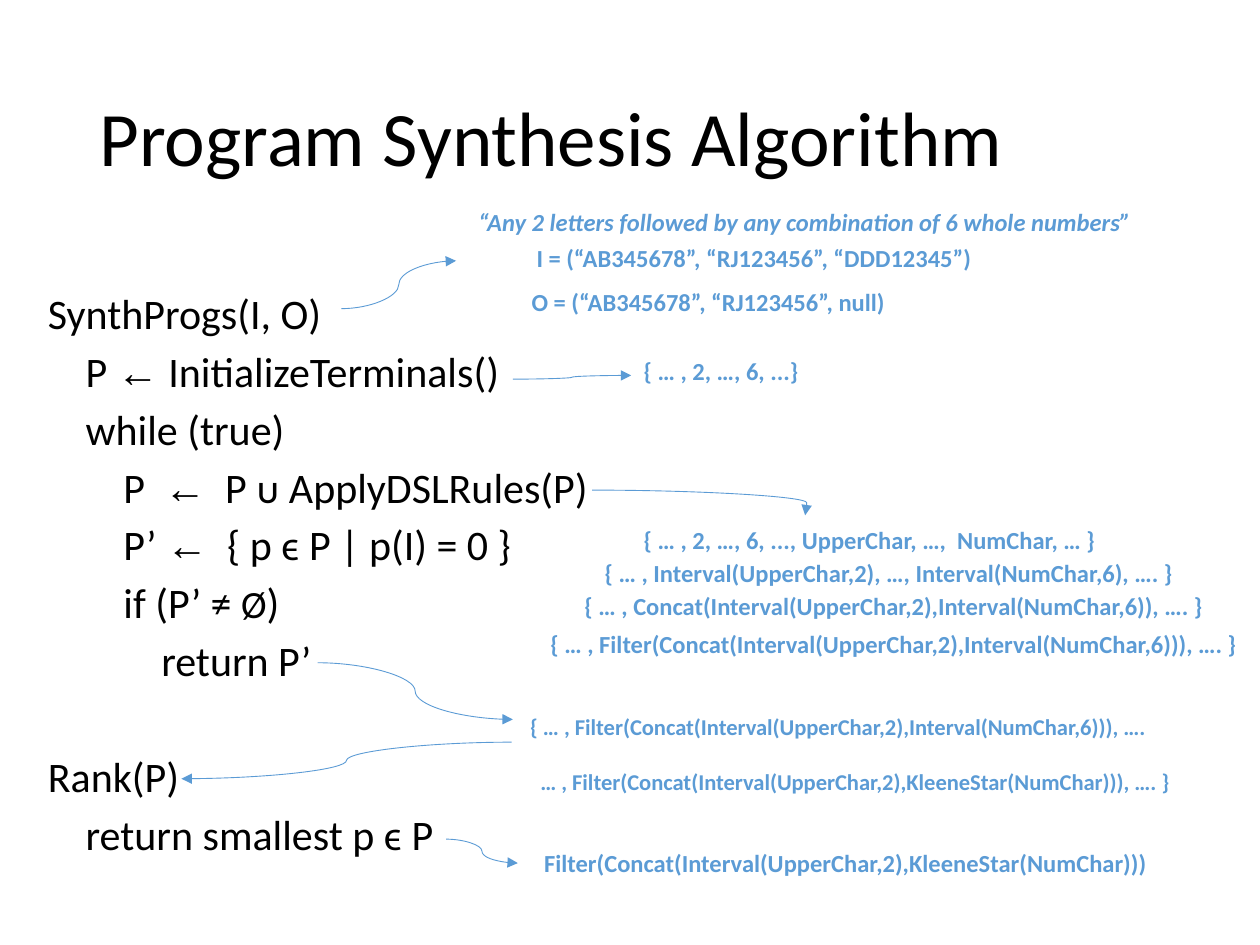
from dataclasses import dataclass

from lxml.etree import SubElement
from pptx import Presentation
from pptx.dml.color import RGBColor
from pptx.enum.shapes import MSO_CONNECTOR as Connector
from pptx.enum.text import MSO_ANCHOR as Anchor, MSO_AUTO_SIZE as AutoSize, PP_ALIGN as Align
from pptx.oxml.ns import qn
from pptx.util import Inches, Pt


@dataclass(frozen=True)
class Theme:
    font: str = "Calibri"
    arrow_font: str = "Times New Roman"
    ink: str = "000000"
    accent: str = "5B9BD5"
    title_size: float = 44
    code_size: float = 24
    symbol_size: float = 22
    note_size: float = 14
    small_size: float = 12.9
    line_width: float = 0.5


THEME = Theme()


def add_span(para, text, size=THEME.code_size, color=THEME.ink, font=THEME.font,
             bold=False, italic=False):
    span = para.add_run()
    span.text = text
    span.font.size = Pt(size)
    span.font.name = font
    span.font.bold = bold
    span.font.italic = italic
    span.font.color.rgb = RGBColor.from_string(color)


def set_indent(para, inches):
    properties = para._p.get_or_add_pPr()
    properties.set("marL", str(Inches(inches)))
    properties.set("indent", "0")
    return properties


def place(shape, left, top, width, height):
    shape.left, shape.top = Inches(left), Inches(top)
    shape.width, shape.height = Inches(width), Inches(height)


class SlideBuilder:
    def __init__(self, deck, theme):
        self.theme = theme
        self.slide = deck.slides.add_slide(deck.slide_layouts[1])

    def title(self, text, *bounds):
        shape = self.slide.shapes.title
        place(shape, *bounds)
        frame = shape.text_frame
        frame.auto_size = AutoSize.NONE
        frame.vertical_anchor = Anchor.MIDDLE
        para = frame.paragraphs[0]
        para.alignment = Align.LEFT
        para.line_spacing = 0.9
        add_span(para, text, size=self.theme.title_size)

    def code(self, lines, *bounds):
        """Each line is (indent level, space before, text)."""
        body = self.slide.placeholders[1]
        place(body, *bounds)
        frame = body.text_frame
        frame.auto_size = AutoSize.NONE
        frame.vertical_anchor = Anchor.TOP
        formats = {"←": {"font": self.theme.arrow_font},
                   "Ø": {"size": self.theme.symbol_size}}
        for index, (level, before, text) in enumerate(lines):
            para = frame.add_paragraph() if index else frame.paragraphs[0]
            para.line_spacing = 0.8
            para.space_before = Pt(before)
            SubElement(set_indent(para, 0.3 * level), qn("a:buNone"))
            symbol = next((mark for mark in formats if mark in text), None)
            head, mark, tail = text.partition(symbol) if symbol else (text, "", "")
            for part in filter(None, (head, mark, tail)):
                add_span(para, part, **formats.get(part, {}))

    def note(self, lines, *bounds, size=THEME.note_size, align=Align.LEFT,
             italic=False, gap=0, indent=0):
        """Gap and indent apply to every line after the first."""
        box = self.slide.shapes.add_textbox(*map(Inches, bounds))
        frame = box.text_frame
        frame.word_wrap = True
        for index, text in enumerate(lines):
            para = frame.add_paragraph() if index else frame.paragraphs[0]
            para.alignment = align
            if index:
                para.space_before = Pt(gap)
                set_indent(para, indent)
            add_span(para, text, size=size, color=self.theme.accent, bold=True, italic=italic)

    def curve(self, start, end, bend=0.5):
        link = self.slide.shapes.add_connector(Connector.CURVE, *map(Inches, start + end))
        link.line.color.rgb = RGBColor.from_string(self.theme.accent)
        link.line.width = Pt(self.theme.line_width)
        SubElement(link.line._get_or_add_ln(), qn("a:tailEnd"), type="triangle")
        properties = link._element.spPr
        SubElement(properties, qn("a:effectLst"))
        guides = properties.find(qn("a:prstGeom")).find(qn("a:avLst"))
        SubElement(guides, qn("a:gd"), name="adj1", fmla=f"val {round(bend * 100000)}")


CODE = [
    (0, 10, "SynthProgs(I, O)"),
    (1, 10, "P ← InitializeTerminals()"),
    (1, 10, "while (true)"),
    (2, 10, "P  ←  P ᴜ ApplyDSLRules(P)"),
    (2, 10, "P’ ←  { p ϵ P | p(I) = 0 }"),
    (2, 10, "if (P’ ≠ Ø)"),
    (3, 10, "return P’"),
    (0, 43.4, "Rank(P)"),
    (1, 10, "return smallest p ϵ P"),
]

# Text, left, top, width
NOTES = [
    ("I = (“AB345678”, “RJ123456”, “DDD12345”)", 4.16, 1.88, 4.92),
    ("O = (“AB345678”, “RJ123456”, null)", 4.12, 2.23, 4.92),
    ("{ … , 2, …, 6, ...}", 5.01, 2.78, 4.92),
    ("{ … , 2, …, 6, ..., UpperChar, …,  NumChar, … }", 5.01, 4.12, 5.31),
    ("{ … , Interval(UpperChar,2), …, Interval(NumChar,6), …. }", 4.7, 4.38, 5.31),
    ("{ … , Concat(Interval(UpperChar,2),Interval(NumChar,6)), …. }", 4.54, 4.64, 5.31),
    ("{ … , Filter(Concat(Interval(UpperChar,2),Interval(NumChar,6))), …. }", 4.27, 4.94, 5.98),
    ("Filter(Concat(Interval(UpperChar,2),KleeneStar(NumChar)))", 4.22, 6.68, 6.43),
]

RANKED = [
    "{ … , Filter(Concat(Interval(UpperChar,2),Interval(NumChar,6))), ….",
    "… , Filter(Concat(Interval(UpperChar,2),KleeneStar(NumChar))), …. }",
]

# Start, end, bend position
CURVES = [
    ((2.71, 2.45), (3.62, 2.07), 0.5),
    ((4.07, 3.01), (5.01, 2.98), 0.5),
    ((4.7, 3.89), (6.39, 4.09), 1.007),
    ((2.52, 5.26), (4.07, 5.71), 0.5),
    ((4.06, 5.89), (1.44, 6.18), 0.5),
    ((3.54, 6.66), (4.11, 6.85), 0.5),
]


def main():
    deck = Presentation()
    deck.slide_width, deck.slide_height = Inches(10), Inches(7.5)
    page = SlideBuilder(deck, THEME)

    # Title and pseudocode
    page.title("Program Synthesis Algorithm", 0.69, 0.4, 8.62, 1.45)
    page.code(CODE, 0.28, 2.31, 8.72, 4.82)

    # Worked example beside the code
    page.note(["“Any 2 letters followed by any combination of 6 whole numbers”"],
              2.76, 1.59, 7.26, 0.49, align=Align.CENTER, italic=True)
    for text, left, top, width in NOTES:
        page.note([text], left, top, width, 0.4)
    page.note(RANKED, 4.11, 5.61, 6.94, 0.72, size=THEME.small_size, gap=15.7, indent=0.08)

    # Arrows from code to example
    for start, end, bend in CURVES:
        page.curve(start, end, bend)

    deck.save("out.pptx")


if __name__ == "__main__":
    main()
